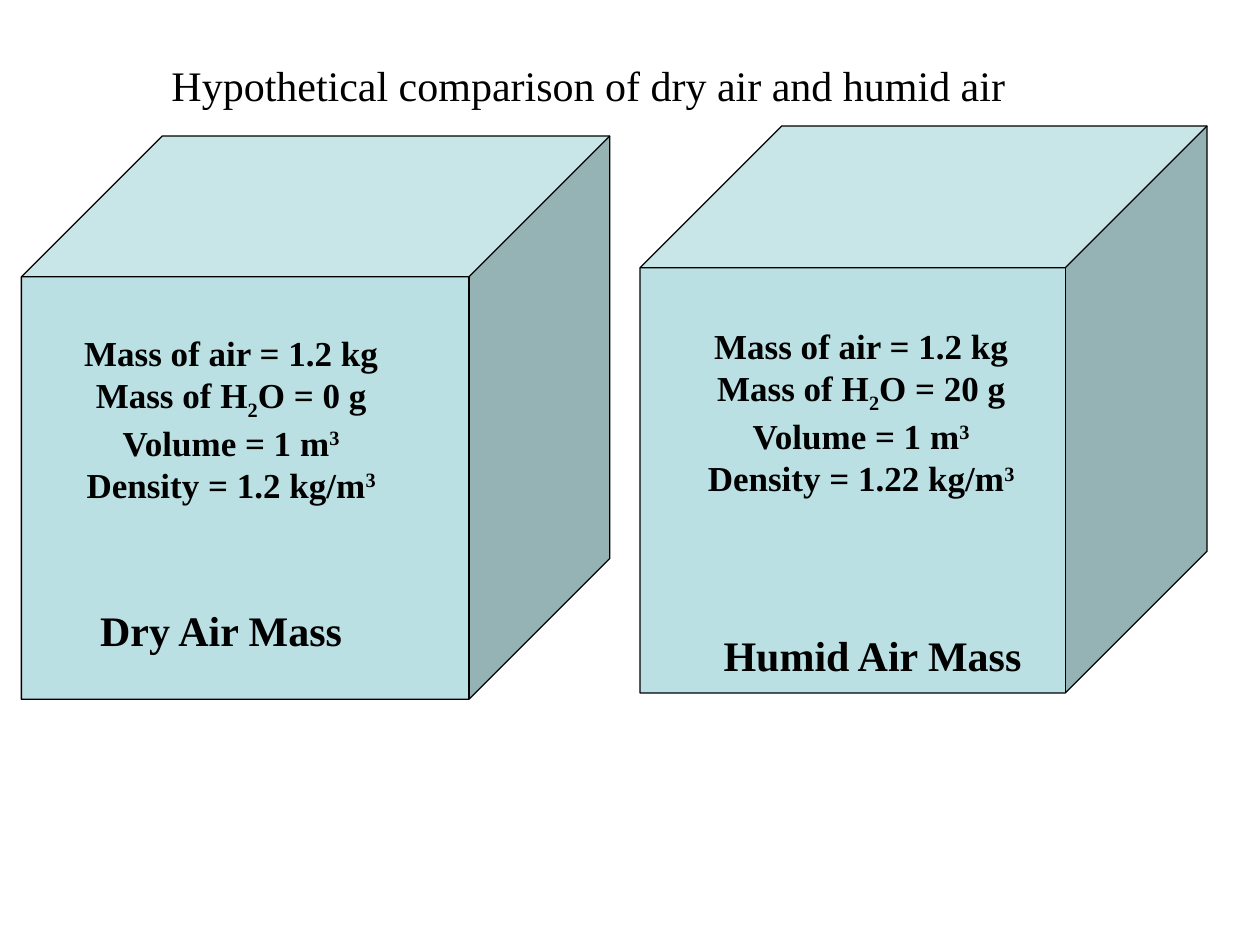
import pptx
import pptx.dml.color
import pptx.enum.shapes
import pptx.enum.text
import pptx.util
from pptx.util import Inches

BLACK = pptx.dml.color.RGBColor(0x00, 0x00, 0x00)
PALE_BLUE = pptx.dml.color.RGBColor(0xBB, 0xE0, 0xE3)
BASELINES = {"_": "-25000", "^": "30000"}


def write_text(shape, text, size=24, bold=True):
    frame = shape.text_frame
    frame.word_wrap = True
    frame.auto_size = pptx.enum.text.MSO_AUTO_SIZE.SHAPE_TO_FIT_TEXT
    frame.vertical_anchor = pptx.enum.text.MSO_ANCHOR.TOP
    for index, line in enumerate(text.split("\n")):
        paragraph = frame.add_paragraph() if index else frame.paragraphs[0]
        paragraph.alignment = pptx.enum.text.PP_ALIGN.CENTER
        for part in line.split("|"):
            run = paragraph.add_run()
            run.text = part.lstrip("_^")
            run.font.name = "Times New Roman"
            run.font.size = pptx.util.Pt(size)
            run.font.bold = bold
            run.font.color.rgb = BLACK
            if part[0] in BASELINES:
                run.font._element.set("baseline", BASELINES[part[0]])


presentation = pptx.Presentation()
presentation.slide_width = Inches(10)
presentation.slide_height = Inches(7.5)
slide = presentation.slides.add_slide(presentation.slide_layouts[5])

title = slide.shapes.title
title.left, title.top = Inches(0.67), Inches(0.42)
title.width, title.height = Inches(8), Inches(0.5)
write_text(title, "Hypothetical comparison of dry air and humid air", bold=False)

air_masses = [
    ("Dry Air Mass", "0", "1.2",
     (0.17, 1.08, 4.67, 4.47), (0.5, 2.58, 2.67, 1.43), (0.42, 4.75, 2.67, 0.5)),
    ("Humid Air Mass", "20", "1.22",
     (5.08, 1, 4.5, 4.5), (5.5, 2.53, 2.67, 1.43), (5.51, 4.95, 2.83, 0.5)),
]

for name, water, density, cube_box, facts_box, name_box in air_masses:
    cube = slide.shapes.add_shape(
        pptx.enum.shapes.MSO_SHAPE.CUBE, *map(Inches, cube_box))
    cube.adjustments[0] = 0.25
    cube.shadow.inherit = False
    cube.fill.solid()
    cube.fill.fore_color.rgb = PALE_BLUE
    cube.line.color.rgb = BLACK
    cube.line.width = pptx.util.Pt(0.75)

    facts = slide.shapes.add_textbox(*map(Inches, facts_box))
    write_text(
        facts,
        "Mass of air = 1.2 kg\n"
        f"Mass of H|_2|O = {water} g\n"
        "Volume = 1 m|^3\n"
        f"Density = {density} kg/m|^3",
        size=20)

    label = slide.shapes.add_textbox(*map(Inches, name_box))
    write_text(label, name)

presentation.save("out.pptx")
